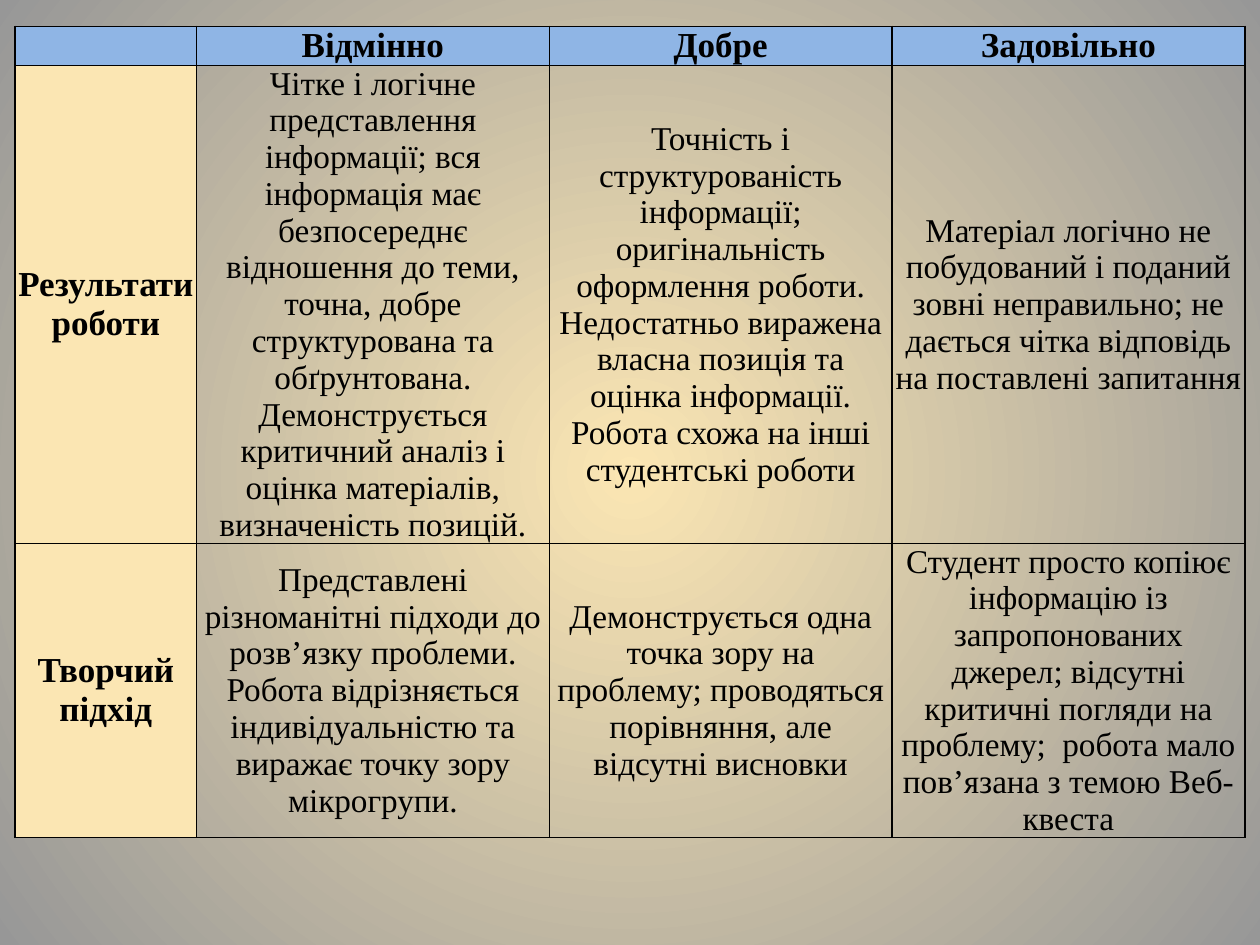
import pptx
import pptx.util
import pptx.oxml
import pptx.oxml.ns
import pptx.dml.color
import pptx.enum.text

Inches = pptx.util.Inches
Pt = pptx.util.Pt
RGB = pptx.dml.color.RGBColor

BLACK = RGB(0x00, 0x00, 0x00)
CREAM = RGB(0xFB, 0xE6, 0xB3)
GREY = RGB(0x97, 0x97, 0x97)
BLUE = RGB(0x8F, 0xB5, 0xE5)

HEAD = ["", "Відмінно", "Добре", "Задовільно"]
BODY = [
    [
        "Результати роботи",
        "Чітке і логічне представлення інформації; вся інформація має "
        "безпосереднє відношення до теми, точна, добре структурована та "
        "обґрунтована. Демонструється критичний аналіз і оцінка матеріалів, "
        "визначеність позицій.",
        "Точність і структурованість інформації; оригінальність оформлення "
        "роботи. Недостатньо виражена власна позиція та оцінка інформації. "
        "Робота схожа на інші студентські роботи",
        "Матеріал логічно не побудований і поданий зовні неправильно; не "
        "дається чітка відповідь на поставлені запитання",
    ],
    [
        "Творчий підхід",
        "Представлені різноманітні підходи до розв’язку проблеми. Робота "
        "відрізняється індивідуальністю та виражає точку зору мікрогрупи.",
        "Демонструється одна точка зору на проблему; проводяться порівняння, "
        "але відсутні висновки",
        "Студент просто копіює інформацію із запропонованих джерел; відсутні "
        "критичні погляди на проблему;  робота мало пов’язана з темою Веб-квеста",
    ],
]
COLS = [1.44, 2.8, 2.72, 2.8]


class Deck:
    font = "Times New Roman"
    large = Pt(20)
    small = Pt(19)
    line = Pt(1)

    def __init__(self):
        self.prs = pptx.Presentation()
        self.prs.slide_width = Inches(10)
        self.prs.slide_height = Inches(7.5)
        self.slide = self.prs.slides.add_slide(self.prs.slide_layouts[6])

    def glow(self, inner, outer):
        names = pptx.oxml.ns.nsdecls("p", "a")
        bg = pptx.oxml.parse_xml(
            f'<p:bg {names}><p:bgPr><a:gradFill rotWithShape="1"><a:gsLst>'
            f'<a:gs pos="0"><a:srgbClr val="{inner}"/></a:gs>'
            f'<a:gs pos="100000"><a:srgbClr val="{outer}"/></a:gs></a:gsLst>'
            '<a:path path="circle"><a:fillToRect l="50000" t="50000" '
            'r="50000" b="50000"/></a:path></a:gradFill><a:effectLst/>'
            '</p:bgPr></p:bg>')
        self.slide.element.cSld.insert(0, bg)

    def border(self, cell):
        props = cell._tc.get_or_add_tcPr()
        names = pptx.oxml.ns.nsdecls("a")
        for spot, side in enumerate(("lnL", "lnR", "lnT", "lnB")):
            props.insert(spot, pptx.oxml.parse_xml(
                f'<a:{side} {names} w="{self.line}"><a:solidFill>'
                f'<a:srgbClr val="{BLACK}"/></a:solidFill></a:{side}>'))

    def cell(self, cell, text, fill, bold):
        cell.margin_left = cell.margin_right = Inches(0.02)
        cell.margin_top = cell.margin_bottom = 0
        cell.vertical_anchor = pptx.enum.text.MSO_ANCHOR.MIDDLE
        if fill is None:
            cell.fill.background()
        else:
            cell.fill.solid()
            cell.fill.fore_color.rgb = fill
        self.border(cell)
        if not text:
            return
        para = cell.text_frame.paragraphs[0]
        para.text = text
        para.alignment = pptx.enum.text.PP_ALIGN.CENTER
        font = para.runs[0].font
        font.name = self.font
        font.size = self.large if bold else self.small
        font.bold = bold
        font.color.rgb = BLACK

    def table(self, top, tall, rows, data, fill, head):
        frame = self.slide.shapes.add_table(
            len(data), len(COLS), Inches(0.12), Inches(top),
            Inches(sum(COLS)), Inches(tall))
        grid = frame.table
        grid.first_row = grid.horz_banding = False
        for col, wide in zip(grid.columns, COLS):
            col.width = Inches(wide)
        for row, high, texts in zip(grid.rows, rows, data):
            row.height = Inches(high)
            for spot, (cell, text) in enumerate(zip(row.cells, texts)):
                bold = head or spot == 0
                self.cell(cell, text, fill if bold else None, bold)
        frame.height = Inches(tall)


def main():
    deck = Deck()
    deck.glow(CREAM, GREY)
    deck.table(0.52, 6.65, [3.03, 1.93], BODY, CREAM, False)
    deck.table(0.21, 0.33, [0.29], [HEAD], BLUE, True)
    deck.prs.save("out.pptx")


if __name__ == "__main__":
    main()
